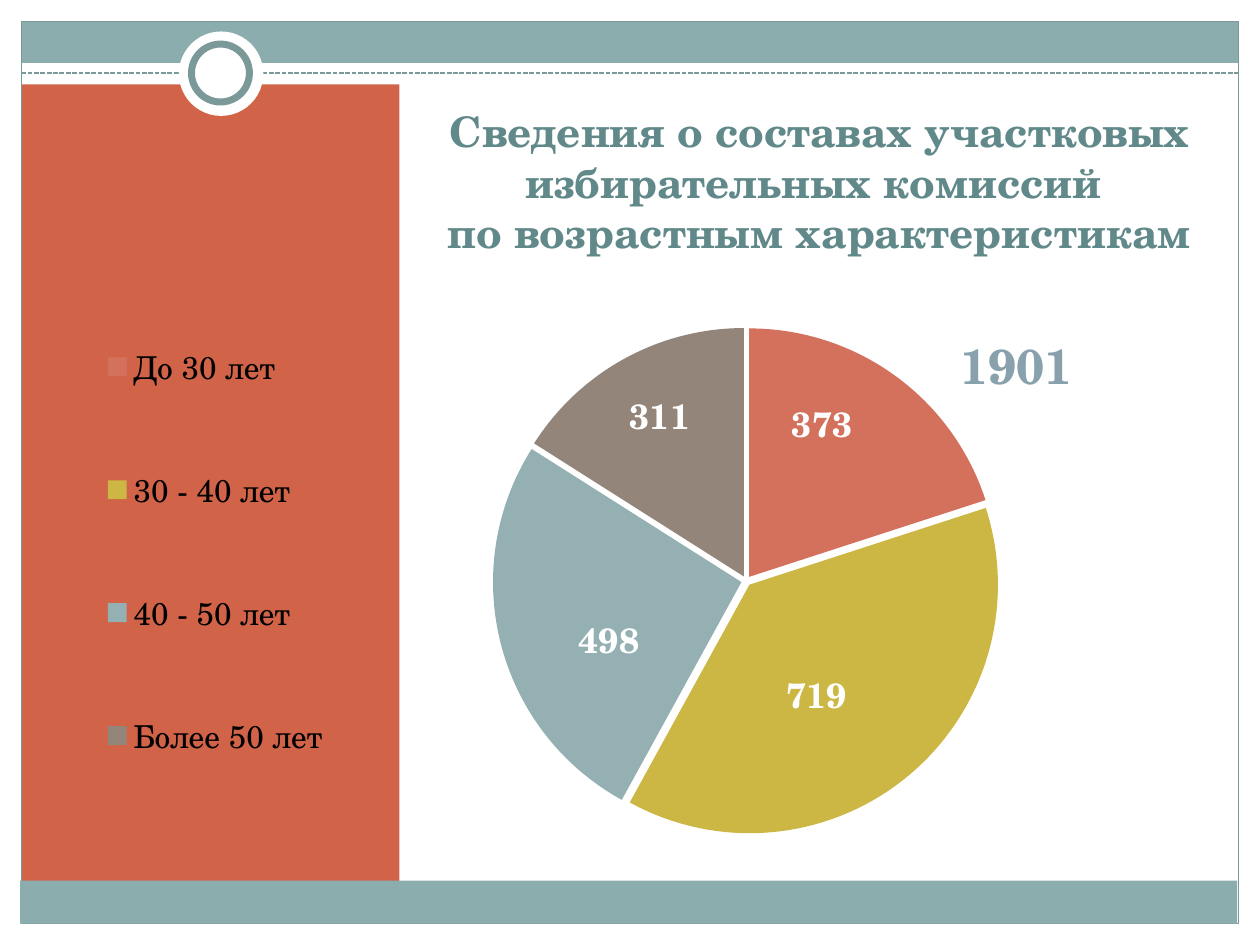
import pptx
import pptx.chart.data
import pptx.dml.color
import pptx.enum.chart
import pptx.enum.dml
import pptx.enum.shapes
import pptx.enum.text
import pptx.oxml
import pptx.oxml.ns
import pptx.util
from pptx.util import Inches

FONT = "TeX Gyre Schola"
COLORS = {
    "white": "FFFFFF", "black": "000000", "band": "8CADAE", "panel": "D16349",
    "rule": "7C999A", "title": "61898A", "total": "88A1AD",
}
AGES = [
    ("До 30 лет", 20, "373", "D3715D", (0, -0.08)),
    ("30 - 40 лет", 38, "719", "CCB744", (-0.01, 0.02)),
    ("40 - 50 лет", 26, "498", "95B0B2", (-0.01, 0.04)),
    ("Более 50 лет", 16, "311", "93857A", (-0.02, -0.08)),
]


def rgb(value):
    return pptx.dml.color.RGBColor.from_string(COLORS.get(value, value))


def style_font(font, size, color, bold=False):
    font.name, font.size, font.bold = FONT, pptx.util.Pt(size), bold
    font.color.rgb = rgb(color)


def add_box(s, box, fill=None, line=None, width=0.75, kind="RECTANGLE"):
    shape_type = getattr(pptx.enum.shapes.MSO_SHAPE, kind)
    sp = s.shapes.add_shape(shape_type, *map(Inches, box))
    sp.shadow.inherit = False
    if fill:
        sp.fill.solid()
        sp.fill.fore_color.rgb = rgb(fill)
    else:
        sp.fill.background()
    if line:
        sp.line.color.rgb = rgb(line)
        sp.line.width = pptx.util.Pt(width)
    else:
        sp.line.fill.background()


def add_dashed_rule(s, left, right, y):
    straight = pptx.enum.shapes.MSO_CONNECTOR.STRAIGHT
    cx = s.shapes.add_connector(straight, Inches(left), Inches(y), Inches(right), Inches(y))
    cx.line.color.rgb = rgb("rule")
    cx.line.width = pptx.util.Pt(0.9)
    cx.line.dash_style = pptx.enum.dml.MSO_LINE.SQUARE_DOT
    effects = pptx.oxml.parse_xml(f'<a:effectLst {pptx.oxml.ns.nsdecls("a")}/>')
    cx._element.spPr.append(effects)


def add_title(s, box, text):
    tf = s.shapes.add_textbox(*map(Inches, box)).text_frame
    tf.word_wrap = True
    tf.vertical_anchor = pptx.enum.text.MSO_ANCHOR.BOTTOM
    p = tf.paragraphs[0]
    p.text = text
    p.alignment = pptx.enum.text.PP_ALIGN.CENTER
    style_font(p.font, 24, "title", True)


def set_layout(parent, index, x, y, w=None, h=None, inner=False, edge=True):
    """Place a chart part by fractions of the chart area."""
    tags = [("layoutTarget", "inner")] if inner else []
    tags += [("xMode", "edge"), ("yMode", "edge")] if edge else []
    tags += [(tag, v) for tag, v in zip("xywh", (x, y, w, h)) if v is not None]
    body = "".join(f'<c:{tag} val="{v}"/>' for tag, v in tags)
    for old in parent.findall(pptx.oxml.ns.qn("c:layout")):
        parent.remove(old)
    parent.insert(index, pptx.oxml.parse_xml(
        f'<c:layout {pptx.oxml.ns.nsdecls("c")}><c:manualLayout>{body}</c:manualLayout></c:layout>'))


def style_slices(plot):
    plot.vary_by_categories = True
    series = plot.series[0]
    explosion = f'<c:explosion {pptx.oxml.ns.nsdecls("c")} val="2"/>'
    series.format.fill.solid()
    series.format.fill.fore_color.rgb = rgb("panel")
    series._element.spPr.addnext(pptx.oxml.parse_xml(explosion))
    for i, (_, _, count, color, _) in enumerate(AGES):
        point = series.points[i]
        point.format.fill.solid()
        point.format.fill.fore_color.rgb = rgb(color)
        label = point.data_label
        p = label.text_frame.paragraphs[0]
        r = p.add_run()
        r.text = count
        style_font(r.font, 20, "white", True)
        label.position = pptx.enum.chart.XL_LABEL_POSITION.CENTER
    for dlbl, age in zip(series._element.iter(pptx.oxml.ns.qn("c:dLbl")), AGES):
        set_layout(dlbl, 1, *age[4], edge=False)


def add_pie(s, box):
    data = pptx.chart.data.CategoryChartData()
    data.categories = [age[0] for age in AGES]
    data.add_series("Series 1", [age[1] for age in AGES])
    kind = pptx.enum.chart.XL_CHART_TYPE.PIE
    chart = s.shapes.add_chart(kind, *map(Inches, box), data).chart
    style_font(chart.font, 18, "black")
    p = chart.chart_title.text_frame.paragraphs[0]
    r = p.add_run()
    r.text = "1901"
    style_font(r.font, 28, "total", True)
    chart.chart_title.include_in_layout = False
    set_layout(chart.chart_title._element, 1, 0.78, 0.14)
    chart.has_legend = True
    chart.legend.position = pptx.enum.chart.XL_LEGEND_POSITION.RIGHT
    chart.legend.include_in_layout = False
    style_font(chart.legend.font, 18, "black")
    set_layout(chart.legend._element, 1, 0.07, 0.07, 0.2, 0.86)
    plot_area = chart.element.find(".//" + pptx.oxml.ns.qn("c:plotArea"))
    set_layout(plot_area, 0, 0.4, 0.16, 0.42, 0.77, inner=True)
    style_slices(chart.plots[0])


def main():
    prs = pptx.Presentation()
    prs.slide_width, prs.slide_height = Inches(10), Inches(7.5)
    s = prs.slides.add_slide(prs.slide_layouts[6])
    add_box(s, (0.17, 0.17, 9.66, 0.33), "band")
    add_box(s, (0.17, 0.67, 3, 6.42), "panel")
    add_box(s, (0.17, 0.17, 9.66, 7.16), line="rule")
    add_dashed_rule(s, 0.17, 9.83, 0.58)
    add_box(s, (1.42, 0.25, 0.67, 0.67), "white", kind="OVAL")
    add_box(s, (1.52, 0.35, 0.46, 0.46), "white", "rule", 4, "OVAL")
    add_box(s, (0.16, 6.99, 9.66, 0.34), "band")
    add_title(s, (3.42, 0.67, 6.17, 1.42),
              "Сведения о составах участковых избирательных комиссий \vпо возрастным характеристикам")
    add_pie(s, (0.08, 1.75, 9.58, 5.25))
    prs.save("out.pptx")


if __name__ == "__main__":
    main()
